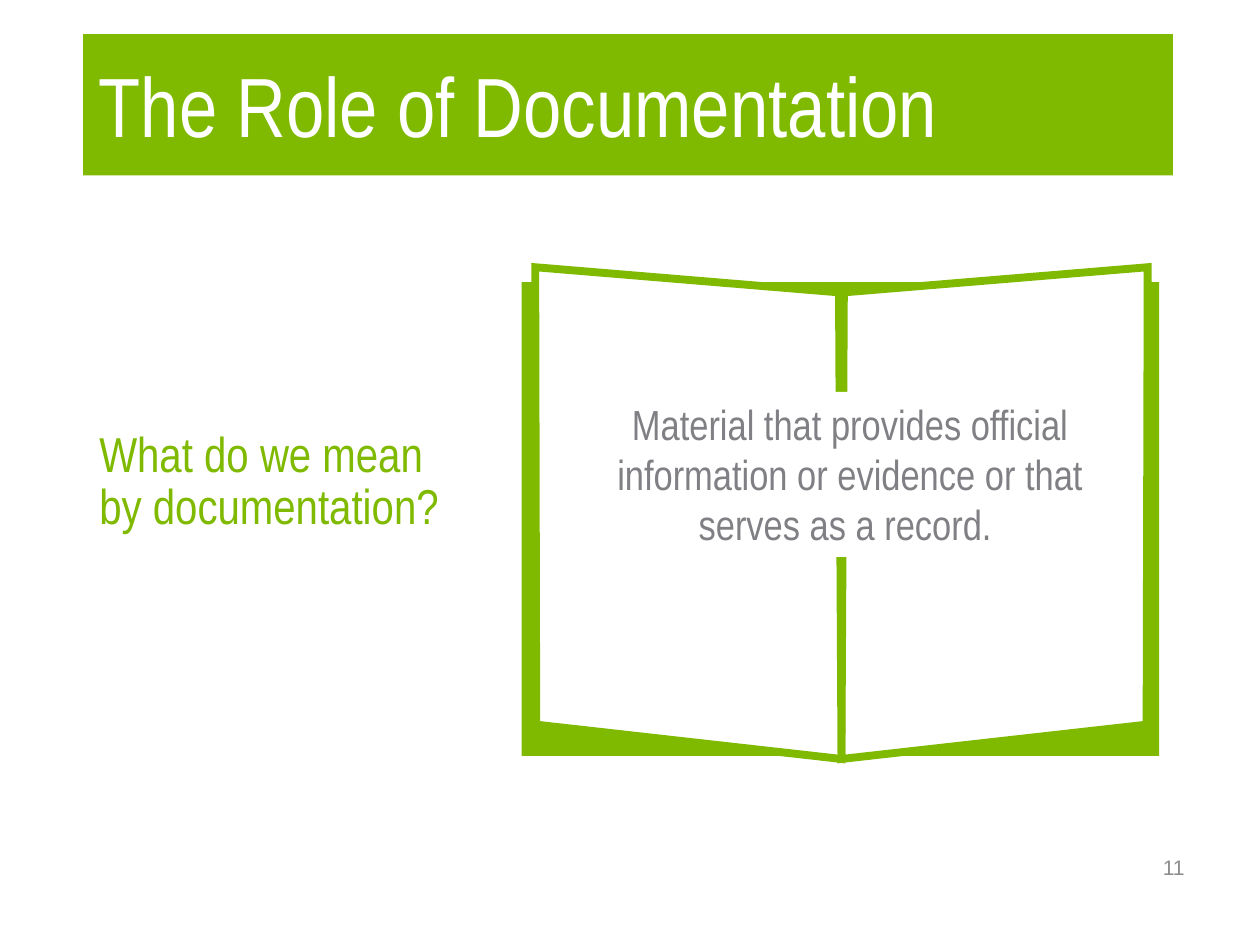
from lxml import etree
from pptx import Presentation
from pptx.dml.color import RGBColor
from pptx.enum.shapes import MSO_SHAPE
from pptx.enum.text import MSO_ANCHOR, PP_ALIGN
from pptx.oxml.ns import qn
from pptx.util import Pt

GREEN = RGBColor(0x7F, 0xBA, 0x00)
WHITE = RGBColor(0xFF, 0xFF, 0xFF)
GREY = RGBColor(0x80, 0x80, 0x84)
PALE_GREY = RGBColor(0x8C, 0x8C, 0x8C)
RECTANGLE = MSO_SHAPE.RECTANGLE
TOP, MIDDLE = MSO_ANCHOR.TOP, MSO_ANCHOR.MIDDLE
LEFT, CENTER, RIGHT = PP_ALIGN.LEFT, PP_ALIGN.CENTER, PP_ALIGN.RIGHT
NARROW = "Arial Narrow"


def add_panel(page, box, color):
    """Add a plain filled rectangle."""
    panel = page.shapes.add_shape(RECTANGLE, *map(Pt, box))
    panel.shadow.inherit = False
    panel.fill.solid()
    panel.fill.fore_color.rgb = color
    panel.line.fill.background()
    return panel


def write_text(shape, text, size, color, font=NARROW, align=LEFT, anchor=TOP, spacing=1.0):
    """Write one styled paragraph into a shape."""
    frame = shape.text_frame
    frame.word_wrap = True
    frame.vertical_anchor = anchor
    para = frame.paragraphs[0]
    para.alignment = align
    para.line_spacing = spacing
    span = para.add_run()
    span.text = text
    span.font.size = Pt(size)
    span.font.name = font
    span.font.color.rgb = color


def add_label(page, box, text, size, color, **style):
    """Add a text box with one paragraph."""
    write_text(page.shapes.add_textbox(*map(Pt, box)), text, size, color, **style)


def add_title(page, box):
    """Add the green banner and the title over it."""
    left, top, width, height = box
    add_panel(page, box, GREEN)
    add_label(page, (left + 2, top - 5, width - 2, height + 16),
              "The Role of Documentation", 48, WHITE, anchor=MIDDLE, spacing=0.9)


def add_leaf(page, spine, top, side):
    """Add one leaf of the book, to the left (-1) or right (1) of the spine."""
    outline = [(0, 281), (174.4, 261.4), (175, 0), (1.4, 14.4)]
    points = [(Pt(spine + side * x), Pt(top + y)) for x, y in outline]
    builder = page.shapes.build_freeform(*points[0])
    builder.add_line_segments(points[1:], close=True)
    leaf = builder.convert_to_shape()
    leaf.shadow.inherit = False
    leaf.fill.solid()
    leaf.fill.fore_color.rgb = WHITE
    leaf.line.color.rgb = GREEN
    leaf.line.width = Pt(4.5)
    etree.SubElement(leaf.line._get_or_add_ln(), qn("a:miter"), lim="800000")


def add_book(page, box):
    """Add the open book with the definition across its leaves."""
    left, top, width, height = box
    add_panel(page, box, GREEN)
    for side in (1, -1):
        add_leaf(page, left + width / 2 + 0.6, top - 8.6, side)
    definition = add_panel(page, (left + 25.2, top + 62.6, 324.7, 94.4), WHITE)
    write_text(definition, "Material that provides official information or evidence "
               "or that serves as a record. ", 24, GREY, align=CENTER)


def main():
    """Build and save the slide."""
    deck = Presentation()
    deck.slide_width, deck.slide_height = Pt(720), Pt(540)
    page = deck.slides.add_slide(deck.slide_layouts[6])
    add_title(page, (47.5, 19.5, 622.8, 80.7))
    add_book(page, (298.1, 161.3, 364.3, 270.7))
    add_label(page, (49.7, 242, 208.8, 70.6), "What do we mean by documentation?",
              28, GREEN, spacing=0.9)
    add_label(page, (516.2, 481, 167.8, 28.8), "11", 12, PALE_GREY,
              font="Arial", align=RIGHT, anchor=MIDDLE)
    deck.save("out.pptx")


if __name__ == "__main__":
    main()
